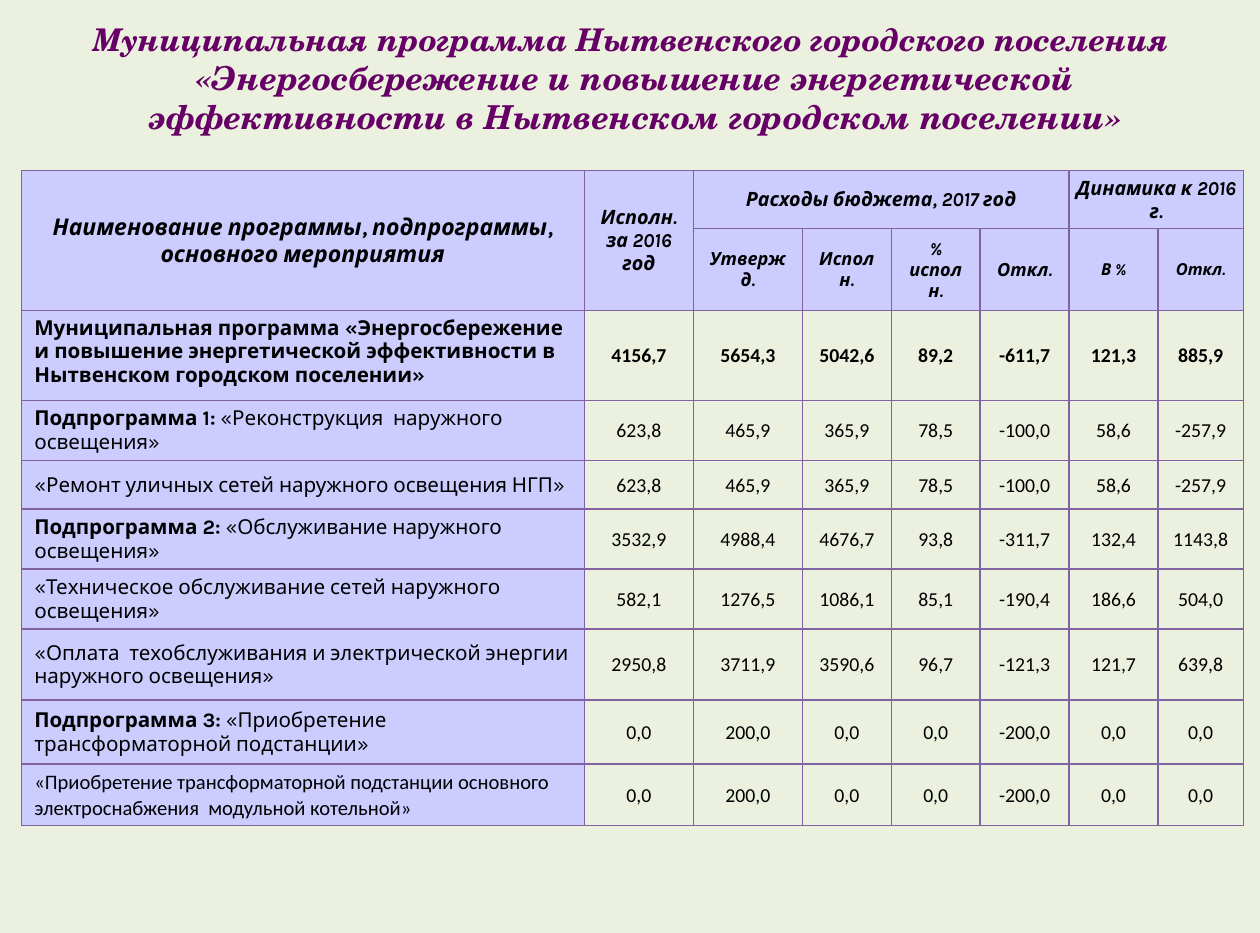
from dataclasses import dataclass

from lxml import etree
from pptx import Presentation
from pptx import util as u
from pptx.dml.color import RGBColor
from pptx.enum import text
from pptx.oxml import ns


@dataclass(frozen=True)
class Theme:
    background: str = "EBF1DE"
    header: str = "CCCCFF"
    border: str = "8064A2"
    title: str = "660066"
    ink: str = "000000"
    title_font: str = "TeX Gyre Schola"
    label_font: str = "Karla"
    value_font: str = "Calibri"
    title_sizes: tuple = (19, 20)
    name_size: float = 14
    group_size: float = 12
    column_size: float = 11
    dynamics_size: float = 10
    label_size: float = 12.5
    value_size: float = 12


THEME = Theme()
TITLE_INSETS = (0.11, 0.05, 0.11, 0.05)
CELL_INSETS = (0.11, 0.05, 0.11, 0.04)
TIGHT_INSETS = (0.01, 0.01, 0.01, 0)

TITLE = ("Муниципальная программа Нытвенского городского поселения \v"
         "«Энергосбережение и повышение энергетической эффективности "
         "в Нытвенском городском поселении»")

COLUMN_WIDTHS = [4.75, 0.92, 0.92, 0.75, 0.75, 0.75, 0.75, 0.72]
ROW_HEIGHTS = [0.49, 0.6, 0.76, 0.42, 0.41, 0.4, 0.46, 0.6, 0.54, 0.52]

# Row, column, rows spanned, columns spanned, text, size, insets
HEADERS = [
    (0, 0, 2, 1, "Наименование программы, подпрограммы, основного мероприятия",
     THEME.name_size, CELL_INSETS),
    (0, 1, 2, 1, "Исполн. за 2016 год", THEME.group_size, CELL_INSETS),
    (0, 2, 1, 4, "Расходы бюджета, 2017 год", THEME.group_size, CELL_INSETS),
    (0, 6, 1, 2, "Динамика к 2016 г.", THEME.group_size, TIGHT_INSETS),
    (1, 2, 1, 1, "Утвержд.", THEME.column_size, CELL_INSETS),
    (1, 3, 1, 1, "Исполн.", THEME.column_size, CELL_INSETS),
    (1, 4, 1, 1, "% исполн.", THEME.column_size, CELL_INSETS),
    (1, 5, 1, 1, "Откл.", THEME.column_size, CELL_INSETS),
    (1, 6, 1, 1, "В %", THEME.dynamics_size, TIGHT_INSETS),
    (1, 7, 1, 1, "Откл.", THEME.dynamics_size, TIGHT_INSETS),
]

# Bold lead, plain remainder, values
BUDGET_ROWS = [
    ("Муниципальная программа «Энергосбережение и повышение энергетической "
     "эффективности в Нытвенском городском поселении»", "",
     "4156,7 5654,3 5042,6 89,2 -611,7 121,3 885,9"),
    ("Подпрограмма 1:", " «Реконструкция  наружного освещения»",
     "623,8 465,9 365,9 78,5 -100,0 58,6 -257,9"),
    ("", "«Ремонт уличных сетей наружного освещения НГП»",
     "623,8 465,9 365,9 78,5 -100,0 58,6 -257,9"),
    ("Подпрограмма 2:", " «Обслуживание наружного освещения»",
     "3532,9 4988,4 4676,7 93,8 -311,7 132,4 1143,8"),
    ("", "«Техническое обслуживание сетей наружного освещения»",
     "582,1 1276,5 1086,1 85,1 -190,4 186,6 504,0"),
    ("", "«Оплата  техобслуживания и электрической энергии наружного освещения»",
     "2950,8 3711,9 3590,6 96,7 -121,3 121,7 639,8"),
    ("Подпрограмма 3:", " «Приобретение трансформаторной подстанции»",
     "0,0 200,0 0,0 0,0 -200,0 0,0 0,0"),
    ("", "«Приобретение трансформаторной подстанции основного "
     "электроснабжения  модульной котельной»",
     "0,0 200,0 0,0 0,0 -200,0 0,0 0,0"),
]


def format_run(run, font, size, color=THEME.ink, bold=False, italic=False):
    run.font.name = font
    run.font.size = u.Pt(size)
    run.font.color.rgb = RGBColor.from_string(color)
    run.font.bold = bold
    run.font.italic = italic


def set_insets(target, insets):
    (target.margin_left, target.margin_top,
     target.margin_right, target.margin_bottom) = map(u.Inches, insets)


def add_title(slide):
    box = slide.shapes.add_textbox(u.Inches(0.4), u.Inches(0.06),
                                   u.Inches(9.92), u.Inches(1.2))
    frame = box.text_frame
    frame.word_wrap = True
    frame.vertical_anchor = text.MSO_ANCHOR.MIDDLE
    set_insets(frame, TITLE_INSETS)
    paragraph = frame.paragraphs[0]
    paragraph.text = TITLE
    paragraph.alignment = text.PP_ALIGN.CENTER
    for run, size in zip(paragraph.runs, THEME.title_sizes):
        format_run(run, THEME.title_font, size, THEME.title, True, True)


def style_cell(cell, fill):
    cell.fill.solid()
    cell.fill.fore_color.rgb = RGBColor.from_string(fill)
    properties = cell._tc.get_or_add_tcPr()
    # Borders come before the fill in the cell properties
    for index, side in enumerate(("lnL", "lnR", "lnT", "lnB")):
        line = etree.Element(ns.qn(f"a:{side}"), w=str(u.Pt(1)))
        solid = etree.SubElement(line, ns.qn("a:solidFill"))
        etree.SubElement(solid, ns.qn("a:srgbClr"), val=THEME.border)
        properties.insert(index, line)


def write_cell(cell, content, insets=CELL_INSETS, centered=True):
    cell.vertical_anchor = text.MSO_ANCHOR.MIDDLE
    set_insets(cell, insets)
    paragraph = cell.text_frame.paragraphs[0]
    paragraph.text = content
    if centered:
        paragraph.alignment = text.PP_ALIGN.CENTER
    return paragraph


def fill_headers(table):
    for row, column, rows, columns, content, size, insets in HEADERS:
        cell = table.cell(row, column)
        if rows * columns > 1:
            cell.merge(table.cell(row + rows - 1, column + columns - 1))
        paragraph = write_cell(cell, content, insets)
        format_run(paragraph.runs[0], THEME.label_font, size, bold=True, italic=True)


def fill_budget_row(table, row, lead, remainder, values):
    last = row == len(ROW_HEIGHTS) - 1
    font = THEME.value_font if last else THEME.label_font
    paragraph = write_cell(table.cell(row, 0), lead or remainder, centered=False)
    format_run(paragraph.runs[0], font, THEME.label_size, bold=bool(lead))
    if lead and remainder:
        run = paragraph.add_run()
        run.text = remainder
        format_run(run, font, THEME.label_size)
    total = not remainder
    if total:
        table.cell(row, 0).vertical_anchor = text.MSO_ANCHOR.TOP
    for column, value in enumerate(values.split(), start=1):
        paragraph = write_cell(table.cell(row, column), value)
        format_run(paragraph.runs[0], THEME.value_font, THEME.value_size, bold=total)


def add_budget_table(slide):
    height = u.Inches(5.19)
    frame = slide.shapes.add_table(len(ROW_HEIGHTS), len(COLUMN_WIDTHS),
                                   u.Inches(0.18), u.Inches(1.44),
                                   u.Inches(10.31), height)
    table = frame.table
    table.first_row = table.horz_banding = False
    for column, width in zip(table.columns, COLUMN_WIDTHS):
        column.width = u.Inches(width)
    for row, row_height in zip(table.rows, ROW_HEIGHTS):
        row.height = u.Inches(row_height)
    frame.height = height

    for row_index, row in enumerate(table.rows):
        for column_index, cell in enumerate(row.cells):
            is_header = row_index < 2 or column_index == 0
            style_cell(cell, THEME.header if is_header else THEME.background)
    fill_headers(table)
    for row_index, budget_row in enumerate(BUDGET_ROWS, start=2):
        fill_budget_row(table, row_index, *budget_row)


def main():
    presentation = Presentation()
    presentation.slide_width = u.Inches(10.63)
    presentation.slide_height = u.Inches(63 / 8)
    slide = presentation.slides.add_slide(presentation.slide_layouts[6])
    slide.background.fill.solid()
    slide.background.fill.fore_color.rgb = RGBColor.from_string(THEME.background)
    add_title(slide)
    add_budget_table(slide)
    presentation.save("out.pptx")


if __name__ == "__main__":
    main()
